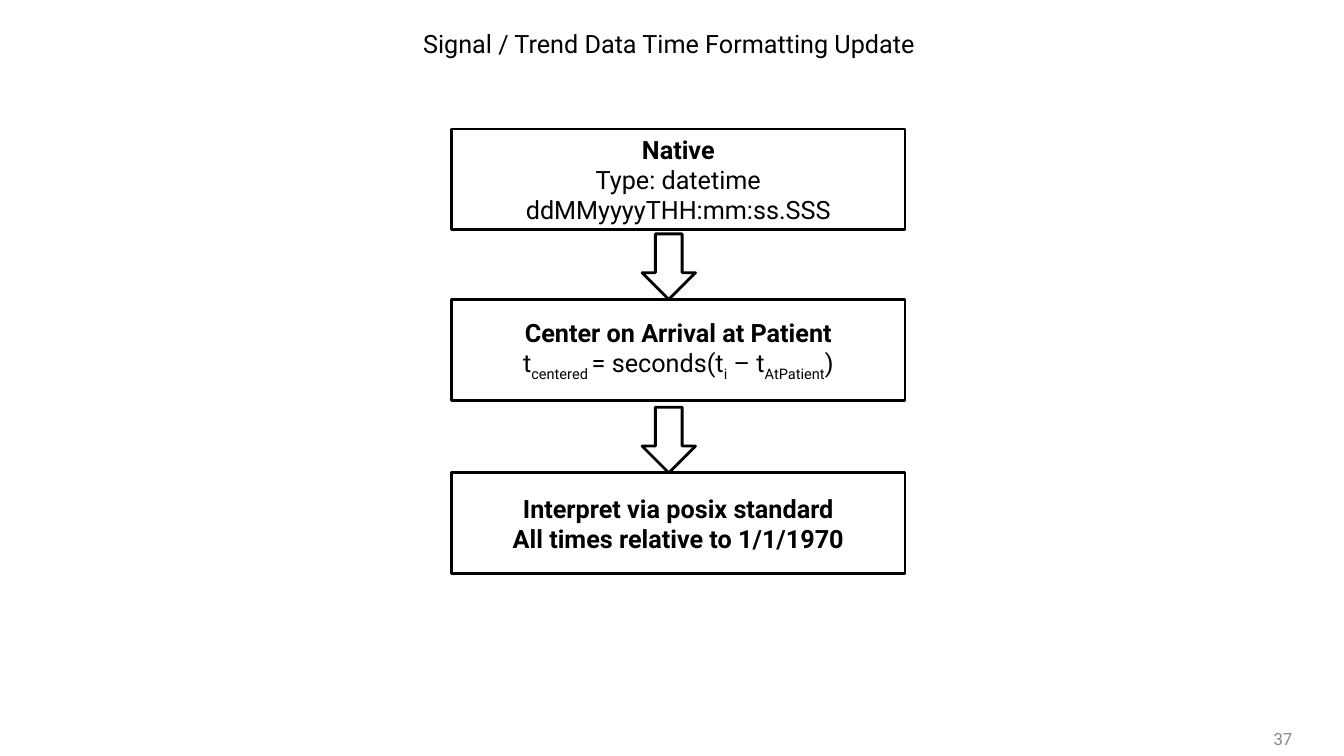
"""Build the slide on time formatting of signal and trend data."""
import dataclasses

import pptx
import pptx.dml.color
import pptx.enum.shapes
import pptx.enum.text
import pptx.util

Pt = pptx.util.Pt
Align = pptx.enum.text.PP_ALIGN
Anchor = pptx.enum.text.MSO_ANCHOR
Shape = pptx.enum.shapes.MSO_SHAPE


@dataclasses.dataclass(frozen=True)
class Theme:
    """Colours, font and sizes of the slide."""
    ink: str = "000000"
    paper: str = "FFFFFF"
    muted: str = "898989"
    font: str = "Roboto"
    body: float = 18
    small: float = 12
    line: float = 2


def color(code):
    """Turn a hex code into a colour."""
    return pptx.dml.color.RGBColor.from_string(code)


def write(para, text, *, font, size, ink, bold=False, sub=False):
    """Add a run of text to a paragraph in the given format."""
    run = para.add_run()
    run.text = text
    run.font.name = font
    run.font.size = Pt(size)
    run.font.bold = bold
    run.font.color.rgb = color(ink)
    if sub:
        run.font._element.set("baseline", "-25000")


class Page:
    """Hold the theme and the slide, and draw each kind of element."""

    def __init__(self, slide, theme):
        self.slide = slide
        self.theme = theme

    def fill(self, frame, lines, align, **style):
        """Write lines, each a list of (text, format) pairs, into a frame."""
        base = dict(font=self.theme.font, size=self.theme.body,
                    ink=self.theme.ink) | style
        frame.word_wrap = True
        for i, line in enumerate(lines):
            para = frame.add_paragraph() if i else frame.paragraphs[0]
            para.alignment = align
            for text, form in line:
                write(para, text, **base | form)

    def label(self, area, text, align=Align.LEFT, anchor=Anchor.TOP, **style):
        """Add a text box with one line."""
        frame = self.slide.shapes.add_textbox(*map(Pt, area)).text_frame
        frame.vertical_anchor = anchor
        self.fill(frame, [[(text, {})]], align, **style)

    def shape(self, kind, area):
        """Add an outlined preset shape."""
        item = self.slide.shapes.add_shape(kind, *map(Pt, area))
        item.shadow.inherit = False
        item.fill.solid()
        item.fill.fore_color.rgb = color(self.theme.paper)
        item.line.color.rgb = color(self.theme.ink)
        item.line.width = Pt(self.theme.line)
        return item

    def box(self, area, lines):
        """Add a rectangle with centred lines."""
        frame = self.shape(Shape.RECTANGLE, area).text_frame
        frame.vertical_anchor = Anchor.MIDDLE
        self.fill(frame, lines, Align.CENTER)

    def arrow(self, left, tip, width=38.16, height=46.8):
        """Add a down arrow whose tip rests at the given height."""
        self.shape(Shape.DOWN_ARROW, (left, tip - height, width, height))


BOLD = {"bold": True}
SUB = {"sub": True}
STEPS = [
    (92.16, [[("Native", BOLD)],
             [("Type: datetime", {})],
             [("ddMMyyyyTHH:mm:ss.SSS", {})]]),
    (213.84, [[("Center on Arrival at Patient", BOLD)],
              [("t", {}), ("centered ", SUB), ("= seconds(t", {}),
               ("i", SUB), (" – t", {}), ("AtPatient", SUB), (")", {})]]),
    (337.68, [[("Interpret via posix standard", BOLD)],
              [("All times relative to 1/1/1970", BOLD)]]),
]


def main():
    """Draw the slide and save it."""
    deck = pptx.Presentation()
    deck.slide_width, deck.slide_height = Pt(960), Pt(540)
    theme = Theme()
    page = Page(deck.slides.add_slide(deck.slide_layouts[6]), theme)
    page.label((850.32, 516.24, 79.92, 23.04), "37", Align.RIGHT,
               Anchor.MIDDLE, size=theme.small, ink=theme.muted)
    page.label((295.2, 16.56, 390.96, 28.8),
               "Signal / Trend Data Time Formatting Update")
    for top, lines in STEPS:
        page.box((322.56, top, 324, 72), lines)
    for top, _ in STEPS[1:]:
        page.arrow(458.64, top)
    deck.save("out.pptx")


if __name__ == "__main__":
    main()
